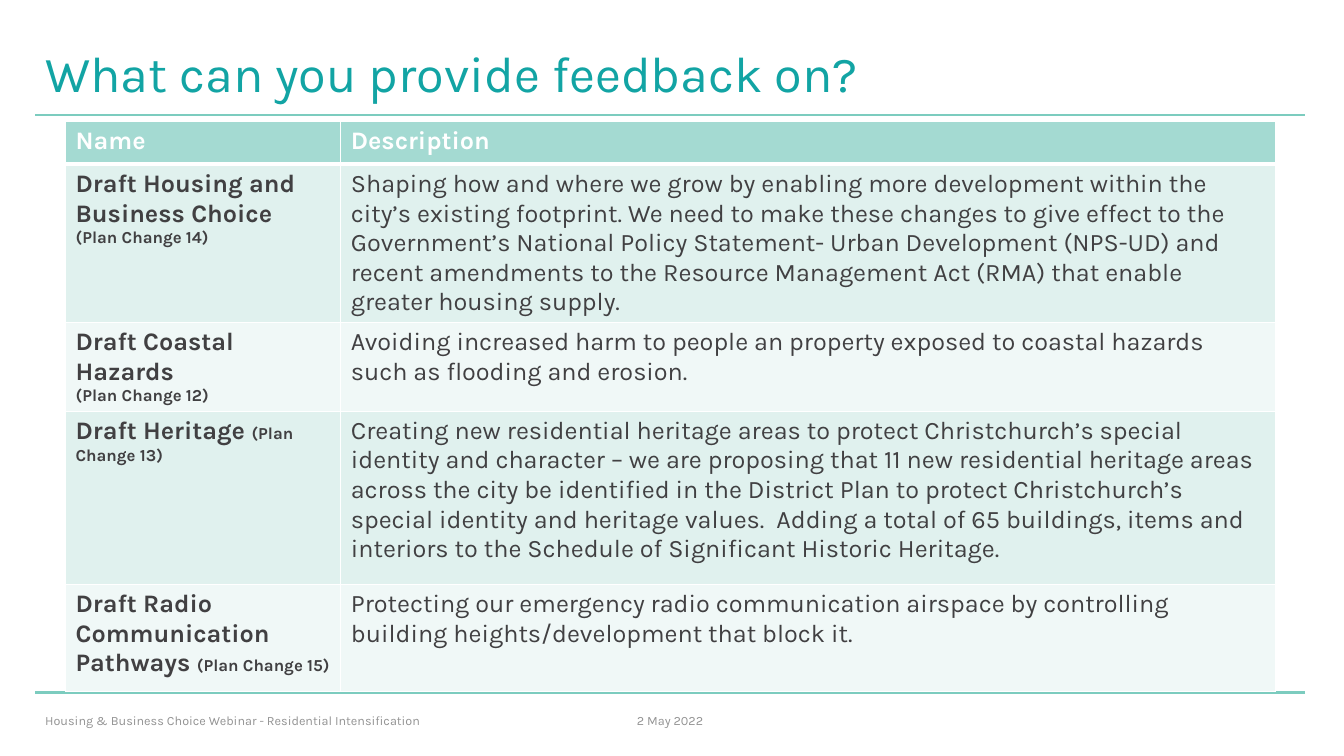
from lxml import etree
from pptx import Presentation
from pptx.dml.color import RGBColor
from pptx.enum.shapes import MSO_CONNECTOR
from pptx.enum.text import MSO_ANCHOR, PP_ALIGN
from pptx.oxml.ns import qn
from pptx.util import Inches, Pt

STRAIGHT = MSO_CONNECTOR.STRAIGHT
MIDDLE = MSO_ANCHOR.MIDDLE
LEFT, CENTER = PP_ALIGN.LEFT, PP_ALIGN.CENTER

FONT = "Karla"
TEAL = RGBColor(0x12, 0xA4, 0xA4)
RULE = RGBColor(0x7C, 0xCC, 0xBF)
HEAD = RGBColor(0xA4, 0xDA, 0xD2)
BANDS = [RGBColor(0xE0, 0xF1, 0xEE), RGBColor(0xF0, 0xF8, 0xF7)]
WHITE = RGBColor(0xFF, 0xFF, 0xFF)
DARK = RGBColor(0x41, 0x40, 0x42)
GREY = RGBColor(0x93, 0x93, 0x93)
BIG, SMALL = 18, 12

# Content
TITLE = "What can you provide feedback on?"
HEADS = ["Name", "Description"]
# Each plan: name paragraphs as lists of (text, size) runs, then description
PLANS = [
    ([[("Draft Housing and Business Choice", BIG)],
      [("(Plan Change 14)", SMALL)]],
     "Shaping how and where we grow by enabling more development within the "
     "city’s existing footprint. We need to make these changes to give effect "
     "to the Government’s National Policy Statement- Urban Development "
     "(NPS-UD) and recent amendments to the Resource Management Act (RMA) "
     "that enable greater housing supply."),
    ([[("Draft Coastal Hazards", BIG), (" ", SMALL)],
      [("(Plan Change 12)", SMALL)]],
     "Avoiding increased harm to people an property exposed to coastal "
     "hazards such as flooding and erosion."),
    ([[("Draft Heritage ", BIG), ("(Plan Change 13)", SMALL)]],
     "Creating new residential heritage areas to protect Christchurch’s "
     "special identity and character – we are proposing that 11 new "
     "residential heritage areas across the city be identified in the "
     "District Plan to protect Christchurch’s special identity and heritage "
     "values.  Adding a total of 65 buildings, items and interiors to the "
     "Schedule of Significant Historic Heritage."),
    ([[("Draft Radio Communication Pathways ", BIG),
       ("(Plan Change 15)", SMALL)]],
     "Protecting our emergency radio communication airspace by controlling "
     "building heights/development that block it."),
]
# Footer: text, left, width, alignment
NOTES = [
    ("Housing & Business Choice Webinar - Residential Intensification",
     0.35, 5.03, LEFT),
    ("2 May 2022", 6.07, 1.15, CENTER),
]
RULES = [1.14, 6.87]
COLS = [2.73, 9.27]
ROWS = [0.43, 1.4, 0.82, 1.72, 1.06]


def add_run(para, text, size, color, bold=False):
    run = para.add_run()
    run.text = text
    font = run.font
    font.name, font.size, font.bold = FONT, Pt(size), bold
    font.color.rgb = color


def add_rule(slide, y):
    line = slide.shapes.add_connector(
        STRAIGHT, Inches(0.35), Inches(y), Inches(12.94), Inches(y))
    line.line.color.rgb = RULE
    line.line.width = Pt(1.5)
    etree.SubElement(line._element.spPr, qn("a:effectLst"))


def add_note(slide, text, left, width, align):
    box = slide.shapes.add_textbox(
        Inches(left), Inches(6.95), Inches(width), Inches(0.4))
    frame = box.text_frame
    frame.word_wrap = True
    frame.vertical_anchor = MIDDLE
    para = frame.paragraphs[0]
    para.alignment = align
    add_run(para, text, 9, GREY)


def fill_cell(cell, paras, fill, color, bold, base):
    # Borders go before the fill in the cell properties
    props = cell._tc.get_or_add_tcPr()
    for side, width in (("L", 1), ("R", 1), ("T", 1), ("B", base)):
        edge = etree.SubElement(props, qn("a:ln" + side), w=str(Pt(width)))
        solid = etree.SubElement(edge, qn("a:solidFill"))
        etree.SubElement(solid, qn("a:srgbClr"), val=str(WHITE))
    cell.fill.solid()
    cell.fill.fore_color.rgb = fill
    frame = cell.text_frame
    for i, runs in enumerate(paras):
        para = frame.add_paragraph() if i else frame.paragraphs[0]
        for text, size in runs:
            add_run(para, text, size, color, bold)


def add_grid(slide):
    grid = slide.shapes.add_table(
        len(ROWS), len(COLS), Inches(0.65), Inches(1.2),
        Inches(sum(COLS)), Inches(sum(ROWS))).table
    for col, width in zip(grid.columns, COLS):
        col.width = Inches(width)
    for row, height in zip(grid.rows, ROWS):
        row.height = Inches(height)
    for c, head in enumerate(HEADS):
        fill_cell(grid.cell(0, c), [[(head, BIG)]], HEAD, WHITE, True, 3)
    for r, (name, about) in enumerate(PLANS, 1):
        band = BANDS[(r - 1) % 2]
        fill_cell(grid.cell(r, 0), name, band, DARK, True, 1)
        fill_cell(grid.cell(r, 1), [[(about, BIG)]], band, DARK, False, 1)
    # The lower edge of the header is the upper edge of the first plan
    for c in range(len(COLS)):
        top = grid.cell(1, c)._tc.tcPr.find(qn("a:lnT"))
        top.set("w", str(Pt(3)))


def main():
    deck = Presentation()
    deck.slide_width, deck.slide_height = Inches(13.33), Inches(7.5)
    slide = deck.slides.add_slide(deck.slide_layouts[5])

    # Rules
    for y in RULES:
        add_rule(slide, y)

    # Title
    title = slide.shapes.title
    title.left, title.top = Inches(0.35), Inches(0.4)
    title.width, title.height = Inches(12.6), Inches(0.72)
    title.text_frame.vertical_anchor = MIDDLE
    para = title.text_frame.paragraphs[0]
    para.alignment = LEFT
    para.line_spacing = 0.9
    add_run(para, TITLE, 36, TEAL)

    # Table and footer
    add_grid(slide)
    for note in NOTES:
        add_note(slide, *note)

    deck.save("out.pptx")


if __name__ == "__main__":
    main()
